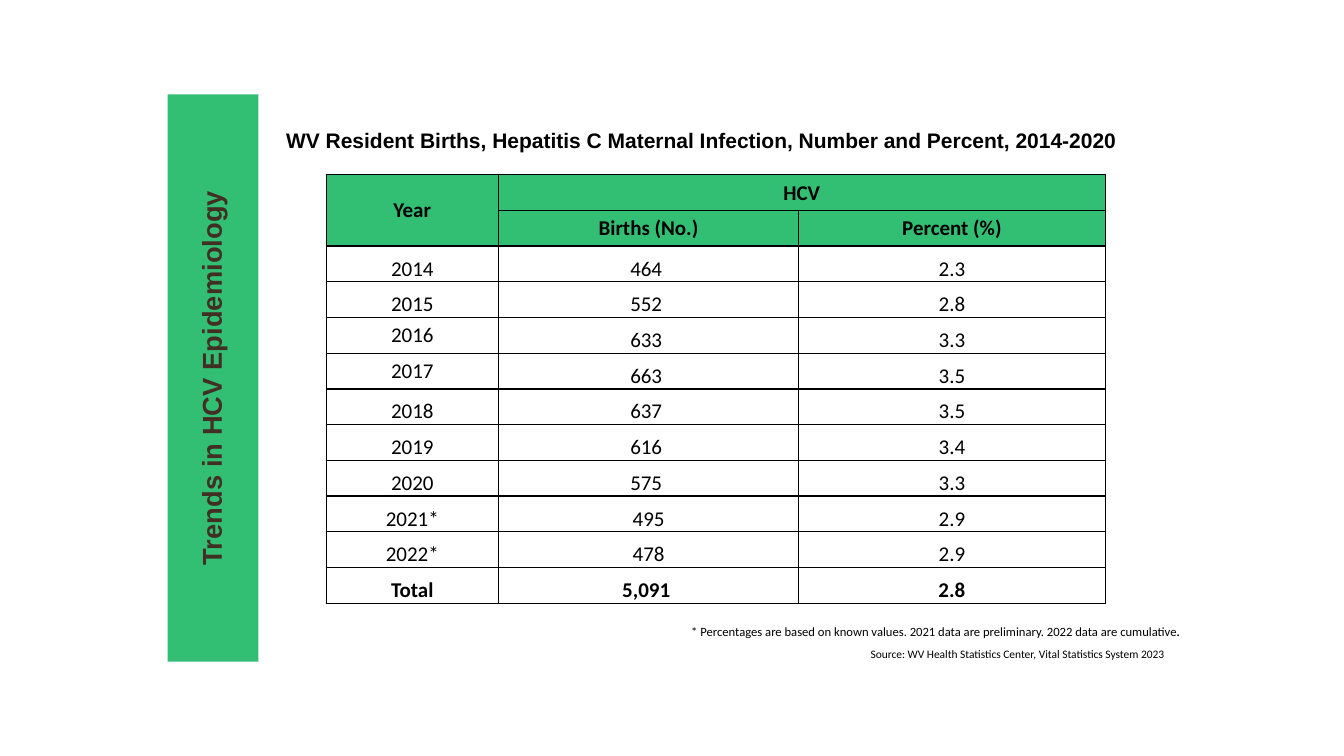
import pptx
import pptx.util
import pptx.dml.color
import pptx.enum.shapes
import pptx.enum.text
import pptx.oxml
import pptx.oxml.ns
import lxml.etree

Cm = pptx.util.Cm
Pt = pptx.util.Pt
Align = pptx.enum.text.PP_ALIGN
Anchor = pptx.enum.text.MSO_ANCHOR
qn = pptx.oxml.ns.qn

GREEN = "00B050"
BLACK = "000000"
WHITE = "FFFFFF"
WIDTHS = [4.34, 7.57, 7.72]
ROW = 0.9
HEADS = [["Year", "HCV", ""], ["", "Births (No.)", "Percent (%)"]]
BIRTHS = [
    ["2014", "464 ", "2.3"],
    ["2015", "552 ", "2.8"],
    ["2016", "633 ", "3.3"],
    ["2017", "663 ", "3.5"],
    ["2018", "637 ", "3.5"],
    ["2019", "616 ", "3.4"],
    ["2020", "575 ", "3.3"],
    ["2021*", "495", "2.9"],
    ["2022*", "478", "2.9"],
    ["Total", "5,091 ", "2.8"],
]


def color(code):
    return pptx.dml.color.RGBColor.from_string(code)


def style(run, size, face, code=BLACK, bold=False):
    run.font.size = Pt(size)
    run.font.name = face
    run.font.bold = bold
    run.font.color.rgb = color(code)


def paint(fill, code, props):
    fill.solid()
    fill.fore_color.rgb = color(code)
    if code == GREEN:
        tone = props.find(qn("a:solidFill")).find(qn("a:srgbClr"))
        lxml.etree.SubElement(tone, qn("a:alpha"), val="80000")


def banner(slide, text):
    bar = slide.shapes.add_shape(
        pptx.enum.shapes.MSO_SHAPE.RECTANGLE, Cm(-1.78), Cm(8.38), Cm(14.3), Cm(2.29))
    bar.rotation = 270
    bar.shadow.inherit = False
    bar.line.fill.background()
    paint(bar.fill, GREEN, bar._element.spPr)
    frame = bar.text_frame
    frame.word_wrap = True
    frame.vertical_anchor = Anchor.MIDDLE
    frame.margin_left = frame.margin_right = Cm(0.18)
    frame.margin_top = frame.margin_bottom = Cm(0.1)
    frame.text = text
    para = frame.paragraphs[0]
    para.alignment = Align.CENTER
    para.line_spacing = 0.9
    style(para.runs[0], 19.5, "Arial", "412F24", True)


def label(slide, box, text, size, face, bold=False, wrap=False):
    frame = slide.shapes.add_textbox(*map(Cm, box)).text_frame
    frame.word_wrap = wrap
    frame.auto_size = pptx.enum.text.MSO_AUTO_SIZE.SHAPE_TO_FIT_TEXT
    frame.text = text
    para = frame.paragraphs[0]
    style(para.runs[0], size, face, bold=bold)
    return para


def border(props):
    for spot, side in enumerate(["lnL", "lnR", "lnT", "lnB"]):
        line = lxml.etree.Element(qn("a:" + side), w=str(Pt(1)))
        fill = lxml.etree.SubElement(line, qn("a:solidFill"))
        lxml.etree.SubElement(fill, qn("a:srgbClr"), val=BLACK)
        props.insert(spot, line)


def entry(cell, text, code, anchor, bold):
    cell.margin_left = cell.margin_right = cell.margin_top = Cm(0.02)
    cell.margin_bottom = 0
    cell.vertical_anchor = anchor
    props = cell._tc.get_or_add_tcPr()
    paint(cell.fill, code, props)
    border(props)
    if text:
        cell.text_frame.text = text
        para = cell.text_frame.paragraphs[0]
        para.alignment = Align.CENTER
        style(para.runs[0], 15, "Calibri", bold=bold)


def grid(slide):
    rows = HEADS + BIRTHS
    table = slide.shapes.add_table(
        len(rows), len(WIDTHS), Cm(8.22), Cm(4.4),
        Cm(sum(WIDTHS)), Cm(ROW * len(rows))).table
    table.first_row = table.horz_banding = False
    for column, width in zip(table.columns, WIDTHS):
        column.width = Cm(width)
    for r, texts in enumerate(rows):
        table.rows[r].height = Cm(ROW)
        head = r < len(HEADS)
        for c, text in enumerate(texts):
            middle = head or text in ("2016", "2017")
            entry(table.cell(r, c), text, GREEN if head else WHITE,
                  Anchor.MIDDLE if middle else Anchor.BOTTOM,
                  head or texts[0] == "Total")
    table.cell(0, 0).merge(table.cell(1, 0))
    table.cell(0, 1).merge(table.cell(0, 2))


def main():
    deck = pptx.Presentation()
    deck.slide_width = Cm(33.87)
    deck.slide_height = Cm(19.05)
    slide = deck.slides.add_slide(deck.slide_layouts[6])
    banner(slide, "Trends in HCV Epidemiology")
    label(slide, (6.96, 3.1, 22.2, 1.55),
          "WV Resident Births, Hepatitis C Maternal Infection, Number and Percent, 2014-2020",
          15, "Arial", bold=True, wrap=True)
    grid(slide)
    label(slide, (21.69, 16.18, 8.26, 0.61),
          "Source: WV Health Statistics Center, Vital Statistics System 2023", 8.2, "Calibri")
    note = label(slide, (17.17, 15.54, 12.93, 0.71),
                 "* Percentages are based on known values. 2021 data are preliminary. "
                 "2022 data are cumulative", 9, "Calibri")
    stop = note.add_run()
    stop.text = "."
    style(stop, 10.5, "Calibri")
    deck.save("out.pptx")


if __name__ == "__main__":
    main()
